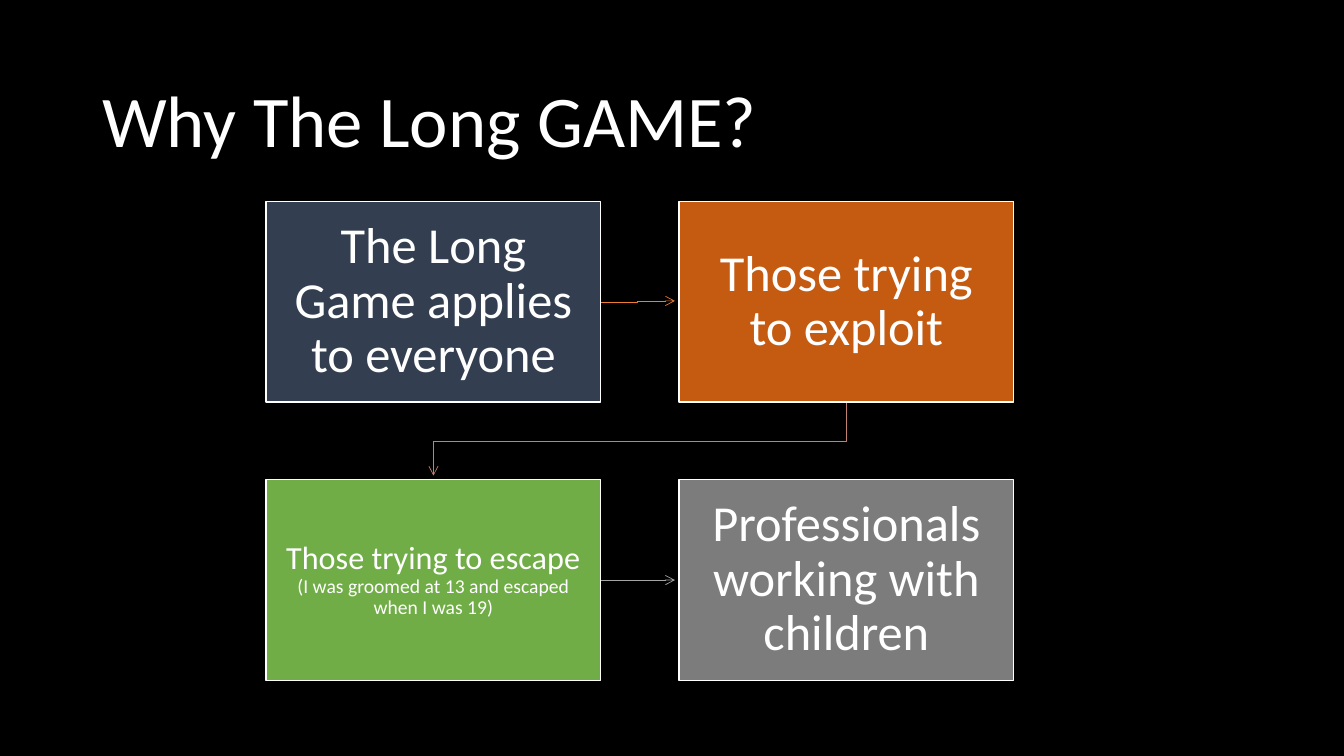
from dataclasses import dataclass

import lxml.etree
import pptx
import pptx.dml.color
import pptx.enum.shapes
import pptx.enum.text
import pptx.oxml.ns
import pptx.util

COLORS = {
    "background": "000000",
    "text": "FFFFFF",
    "everyone": "333F50",
    "exploit": "C55A11",
    "escape": "70AD47",
    "professionals": "7C7C7C",
    "first_arrow": "ED7D31",
    "turn_arrow": "C48170",
    "last_arrow": "A5A5A5",
}
FONT = "Calibri"
STEP_WIDTH, STEP_HEIGHT = 239, 143.3
LEFT, TOP = 190.1, 144
COLUMN_PITCH, ROW_PITCH = 295, 198.7
ARROW_GAP = 3

Pt = pptx.util.Pt
Connector = pptx.enum.shapes.MSO_CONNECTOR


@dataclass(frozen=True)
class Phrase:
    text: str
    size: float


@dataclass(frozen=True)
class Step:
    column: int
    row: int
    color: str
    phrases: tuple[Phrase, ...]

    @property
    def left(self) -> float:
        return LEFT + self.column * COLUMN_PITCH

    @property
    def top(self) -> float:
        return TOP + self.row * ROW_PITCH

    @property
    def center(self) -> float:
        return self.left + STEP_WIDTH / 2

    @property
    def middle(self) -> float:
        return self.top + STEP_HEIGHT / 2


STEPS = (
    Step(0, 0, "everyone", (Phrase("The Long Game applies to everyone", 36),)),
    Step(1, 0, "exploit", (Phrase("Those trying to exploit", 36),)),
    Step(0, 1, "escape", (
        Phrase("Those trying to escape ", 23),
        Phrase("(I was groomed at 13 and escaped when I was 19)", 14),
    )),
    Step(1, 1, "professionals", (Phrase("Professionals working with children", 36),)),
)


def rgb(name: str) -> pptx.dml.color.RGBColor:
    return pptx.dml.color.RGBColor.from_string(COLORS[name])


def write_phrases(frame, phrases: tuple[Phrase, ...]) -> None:
    frame.word_wrap = True
    frame.vertical_anchor = pptx.enum.text.MSO_ANCHOR.MIDDLE
    frame.text = phrases[0].text
    paragraph = frame.paragraphs[0]
    paragraph.line_spacing = 0.9
    for phrase in phrases[1:]:
        paragraph.add_run().text = phrase.text
    for run, phrase in zip(paragraph.runs, phrases):
        run.font.name = FONT
        run.font.size = Pt(phrase.size)
        run.font.color.rgb = rgb("text")


def draw_step(slide, step: Step) -> None:
    box = slide.shapes.add_shape(
        pptx.enum.shapes.MSO_SHAPE.RECTANGLE,
        Pt(step.left), Pt(step.top), Pt(STEP_WIDTH), Pt(STEP_HEIGHT),
    )
    box.shadow.inherit = False
    box.fill.solid()
    box.fill.fore_color.rgb = rgb(step.color)
    box.line.color.rgb = rgb("text")
    box.line.width = Pt(1)
    frame = box.text_frame
    frame.margin_left = frame.margin_right = Pt(11.7)
    frame.margin_top = frame.margin_bottom = Pt(12.3)
    write_phrases(frame, step.phrases)
    frame.paragraphs[0].alignment = pptx.enum.text.PP_ALIGN.CENTER


def style_arrow(line, color: str) -> None:
    line.color.rgb = rgb(color)
    line.width = Pt(0.5)
    head = lxml.etree.SubElement(
        line._get_or_add_ln(), pptx.oxml.ns.qn("a:tailEnd")
    )
    head.set("type", "arrow")


def draw_arrow_across(slide, start: Step, end: Step, color: str,
                      kind: Connector, rise: float) -> None:
    arrow = slide.shapes.add_connector(
        kind,
        Pt(start.left + STEP_WIDTH), Pt(start.middle),
        Pt(end.left - ARROW_GAP), Pt(end.middle - rise),
    )
    style_arrow(arrow.line, color)
    lxml.etree.SubElement(
        arrow._element.spPr, pptx.oxml.ns.qn("a:effectLst")
    )


def draw_arrow_down(slide, start: Step, end: Step, color: str) -> None:
    bottom = start.top + STEP_HEIGHT
    bend = (bottom + end.top) / 2
    route = slide.shapes.build_freeform(Pt(start.center), Pt(bottom))
    route.add_line_segments(
        [
            (Pt(start.center), Pt(bend)),
            (Pt(end.center), Pt(bend)),
            (Pt(end.center), Pt(end.top - ARROW_GAP)),
        ],
        close=False,
    )
    arrow = route.convert_to_shape()
    arrow.shadow.inherit = False
    arrow.fill.background()
    style_arrow(arrow.line, color)


def main() -> None:
    deck = pptx.Presentation()
    deck.slide_width, deck.slide_height = Pt(960), Pt(540)
    slide = deck.slides.add_slide(deck.slide_layouts[6])
    slide.background.fill.solid()
    slide.background.fill.fore_color.rgb = rgb("background")

    title = slide.shapes.add_textbox(Pt(66), Pt(44), Pt(828), Pt(89))
    write_phrases(title.text_frame, (Phrase("Why The Long GAME?", 52),))

    everyone, exploit, escape, professionals = STEPS
    draw_arrow_across(slide, everyone, exploit, "first_arrow", Connector.ELBOW, 0.7)
    draw_arrow_down(slide, exploit, escape, "turn_arrow")
    draw_arrow_across(slide, escape, professionals, "last_arrow", Connector.STRAIGHT, 0)
    for step in STEPS:
        draw_step(slide, step)

    deck.save("out.pptx")


if __name__ == "__main__":
    main()
